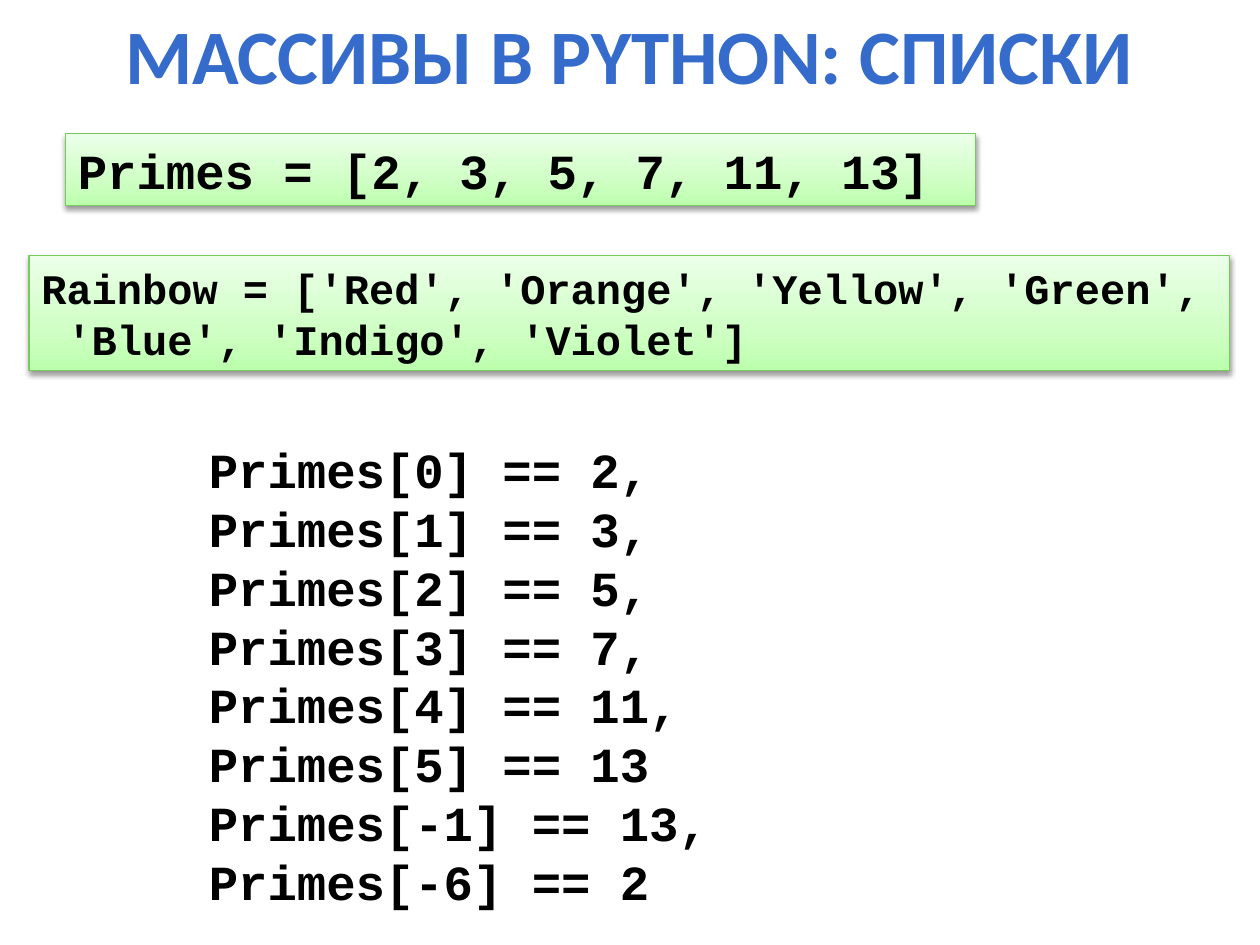
from lxml import etree
from pptx import Presentation
from pptx.dml.color import RGBColor
from pptx.enum.shapes import MSO_SHAPE
from pptx.enum.text import MSO_ANCHOR, MSO_AUTO_SIZE, PP_ALIGN
from pptx.oxml.ns import qn
from pptx.util import Inches, Pt

RECT = MSO_SHAPE.RECTANGLE
MIDDLE = MSO_ANCHOR.MIDDLE
CENTER, LEFT = PP_ALIGN.CENTER, PP_ALIGN.LEFT
NO_AUTOFIT, GROW = MSO_AUTO_SIZE.NONE, MSO_AUTO_SIZE.SHAPE_TO_FIT_TEXT

BLACK = RGBColor(0x00, 0x00, 0x00)
GREEN_LINE = RGBColor(0x78, 0xC8, 0x5D)
GREEN_STOPS = [(0, RGBColor(0xBC, 0xFF, 0xAD)), (35, RGBColor(0xCF, 0xFF, 0xC5)),
               (100, RGBColor(0xEC, 0xFF, 0xE9))]
BLUE_STOPS = [(0, RGBColor(0x64, 0x88, 0xD4)), (49, RGBColor(0x35, 0x6B, 0xCA)),
              (50, RGBColor(0x00, 0x5D, 0xB1)), (92, RGBColor(0x00, 0x53, 0x9E)),
              (100, RGBColor(0x00, 0x51, 0x9B))]
NBSP = chr(160)  # code lines use no-break spaces


def set_gradient(fill, element, stops, angle):
    fill.gradient()
    fill.gradient_angle = angle
    gs_list = element.find(".//" + qn("a:gsLst"))
    for gs in list(gs_list):
        gs_list.remove(gs)
    for pos, color in stops:
        gs = etree.SubElement(gs_list, qn("a:gs"), pos=str(pos * 1000))
        etree.SubElement(gs, qn("a:srgbClr"), val=str(color))


def add_code(p, text, size):
    p.alignment = LEFT
    r = p.add_run()
    r.text = text.replace(" ", NBSP)
    r.font.name = "Courier New"
    r.font.size = Pt(size)
    r.font.bold = True
    r.font.color.rgb = BLACK


prs = Presentation()
prs.slide_width, prs.slide_height = Inches(10), Inches(7.5)
s = prs.slides.add_slide(prs.slide_layouts[5])

# Title
title = s.shapes.title
title.left, title.top = Inches(0), Inches(0)
title.width, title.height = Inches(10), Inches(0.85)
tf = title.text_frame
tf.auto_size = NO_AUTOFIT
tf.vertical_anchor = MIDDLE
p = tf.paragraphs[0]
p.alignment = CENTER
r = p.add_run()
r.text = "МАССИВЫ В PYTHON: СПИСКИ"
r.font.name = "Calibri"
r.font.size = Pt(44)
r.font.bold = True
set_gradient(r.font.fill, title.element, BLUE_STOPS, 270)

# Green boxes with list definitions
definitions = [
    (0.52, 1.06, 7.22, 0.57, 28, "Primes = [2, 3, 5, 7, 11, 13]"),
    (0.23, 2.03, 9.53, 0.91, 24,
     "Rainbow = ['Red', 'Orange', 'Yellow', 'Green', 'Blue', 'Indigo', 'Violet']"),
]
for left, top, width, height, size, code in definitions:
    sp = s.shapes.add_shape(RECT, Inches(left), Inches(top), Inches(width), Inches(height))
    set_gradient(sp.fill, sp.element, GREEN_STOPS, 90)
    sp.line.color.rgb = GREEN_LINE
    sp.line.width = Pt(0.75)
    sp.shadow.inherit = False
    shadow = etree.SubElement(
        sp.element.find(".//" + qn("a:effectLst")), qn("a:outerShdw"),
        blurRad=str(Pt(3.1)), dist=str(Pt(1.6)), dir="5400000", rotWithShape="0")
    color = etree.SubElement(shadow, qn("a:srgbClr"), val=str(BLACK))
    etree.SubElement(color, qn("a:alpha"), val="38000")
    tf = sp.text_frame
    tf.word_wrap = True
    tf.auto_size = GROW
    tf.vertical_anchor = MIDDLE
    add_code(tf.paragraphs[0], code, size)

# Element access examples
examples = ["Primes[0] == 2,", "Primes[1] == 3, ", "Primes[2] == 5, ", "Primes[3] == 7, ",
            "Primes[4] == 11,", "Primes[5] == 13", "Primes[-1] == 13, ", "Primes[-6] == 2"]
box = s.shapes.add_textbox(Inches(1.56), Inches(3.44), Inches(4.77), Inches(3.87))
tf = box.text_frame
tf.word_wrap = True
tf.auto_size = GROW
for i, code in enumerate(examples):
    p = tf.add_paragraph() if i else tf.paragraphs[0]
    add_code(p, code, 28)

prs.save("out.pptx")
